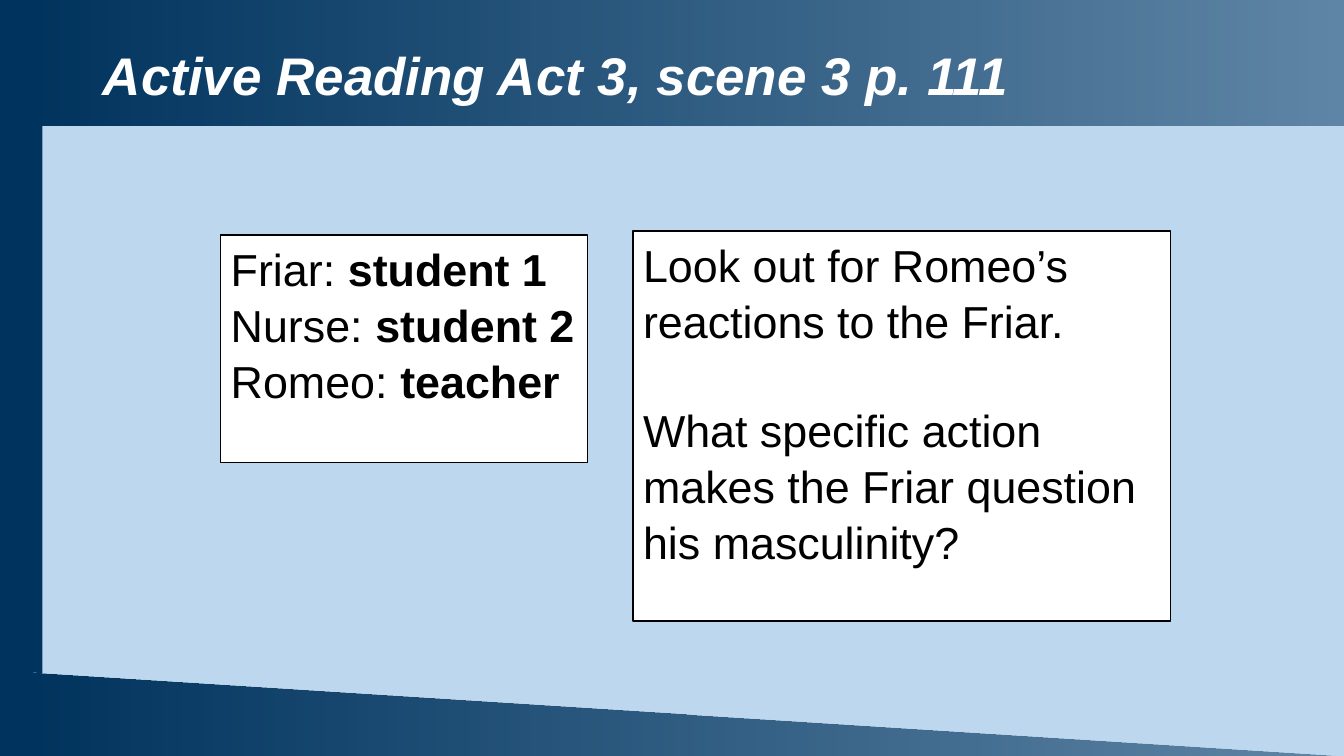
from lxml.etree import SubElement
from pptx import Presentation
from pptx.dml.color import RGBColor
from pptx.enum.shapes import MSO_SHAPE
from pptx.enum.text import MSO_ANCHOR, PP_ALIGN
from pptx.oxml.ns import qn
from pptx.util import Inches, Pt

# Content
TITLE = "Active Reading Act 3, scene 3 p. 111"
# Each paragraph is a pair: plain text, bold text
ROLES = [("Friar: ", "student 1"), ("Nurse: ", "student 2"), ("Romeo: ", "teacher")]
QUESTIONS = [
    ("Look out for Romeo’s reactions to the Friar.", ""),
    ("What specific action makes the Friar question his masculinity?", ""),
]
# Position and size, wrapping, space between paragraphs in points, paragraphs
CARDS = [
    ((2.19, 2.33, 3.64, 2.26), False, 0, ROLES),
    ((6.28, 2.29, 5.33, 3.87), True, 38, QUESTIONS),
]
# Preset, position and size, whether it fades to the right
BANDS = [
    (MSO_SHAPE.RECTANGLE, (0.33, 0, 13, 1.25), True),
    (MSO_SHAPE.RECTANGLE, (0, 0, 0.42, 7.5), False),
    (MSO_SHAPE.RIGHT_TRIANGLE, (0.33, 6.67, 13, 0.83), True),
]
COLORS = {"sky": "BDD7EE", "navy": "00345E", "white": "FFFFFF", "black": "000000"}
FONT = "Arial"


def color(name):
    return RGBColor.from_string(COLORS[name])


def add_plain_shape(preset, bounds):
    shape = page.shapes.add_shape(preset, *map(Inches, bounds))
    shape.shadow.inherit = False
    return shape


def fill_fading(shape):
    shape.fill.gradient()
    shape.fill.gradient_angle = 0
    for stop in shape.fill.gradient_stops:
        stop.color.rgb = color("navy")
    last_color = list(shape._element.spPr.iter(qn("a:srgbClr")))[-1]
    SubElement(last_color, qn("a:alpha"), val="50000")


def style(span, size, tint, bold=False, italic=False):
    span.font.name = FONT
    span.font.size = Pt(size)
    span.font.color.rgb = color(tint)
    span.font.bold = bold
    span.font.italic = italic


deck = Presentation()
deck.slide_width, deck.slide_height = Inches(13.33), Inches(7.5)
page = deck.slides.add_slide(deck.slide_layouts[5])
page.background.fill.solid()
page.background.fill.fore_color.rgb = color("sky")

# Navy frame
for preset, bounds, fades in BANDS:
    band = add_plain_shape(preset, bounds)
    band.line.fill.background()
    if fades:
        fill_fading(band)
    else:
        band.fill.solid()
        band.fill.fore_color.rgb = color("navy")

# Title, moved in front of the frame
title = page.shapes.title
page.shapes._spTree.append(title._element)
title.left, title.top, title.width, title.height = map(Inches, (0.92, 0.05, 12.25, 1.45))
title.text_frame.text = TITLE
title.text_frame.vertical_anchor = MSO_ANCHOR.MIDDLE
para = title.text_frame.paragraphs[0]
para.alignment = PP_ALIGN.LEFT
para.line_spacing = 0.9
style(para.runs[0], 37.8, "white", bold=True, italic=True)

# Text cards
for bounds, wraps, gap, lines in CARDS:
    card = add_plain_shape(MSO_SHAPE.RECTANGLE, bounds)
    card.fill.solid()
    card.fill.fore_color.rgb = color("white")
    card.line.color.rgb = color("black")
    card.line.width = Pt(1)
    frame = card.text_frame
    frame.word_wrap = wraps
    frame.vertical_anchor = MSO_ANCHOR.TOP
    for index, (plain, strong) in enumerate(lines):
        para = frame.paragraphs[0] if index == 0 else frame.add_paragraph()
        para.alignment = PP_ALIGN.LEFT
        para.line_spacing = 1.04
        para.space_before = Pt(gap if index else 0)
        for text, bold in ((plain, False), (strong, True)):
            if text:
                span = para.add_run()
                span.text = text
                style(span, 32, "black", bold=bold)

deck.save("out.pptx")
